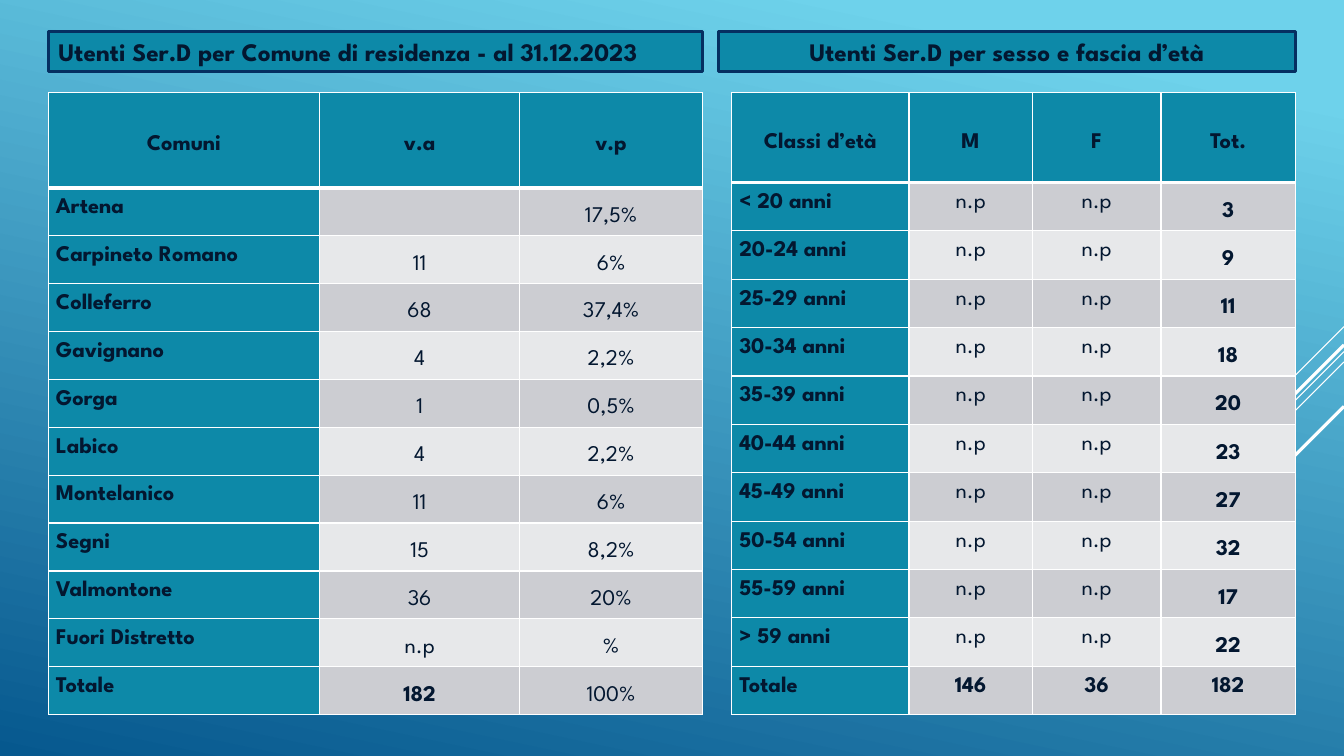
from dataclasses import dataclass

from lxml import etree
from pptx import Presentation
from pptx.dml.color import RGBColor
from pptx.enum.shapes import MSO_CONNECTOR, MSO_SHAPE
from pptx.enum.text import MSO_ANCHOR, MSO_AUTO_SIZE, PP_ALIGN
from pptx.oxml.ns import qn
from pptx.util import Cm, Pt

CENTER, LEFT, JUSTIFY = PP_ALIGN.CENTER, PP_ALIGN.LEFT, PP_ALIGN.JUSTIFY
TOP, MIDDLE = MSO_ANCHOR.TOP, MSO_ANCHOR.MIDDLE
NO_AUTOFIT = MSO_AUTO_SIZE.NONE
RECTANGLE, STRAIGHT = MSO_SHAPE.RECTANGLE, MSO_CONNECTOR.STRAIGHT

SLIDE_WIDTH, SLIDE_HEIGHT = 33.87, 19.05
RIGHT_EDGE = 32.64
HEADING_TOP, HEADING_HEIGHT = 0.79, 1.02
TABLE_TOP, TABLE_HEIGHT = 2.34, 15.67


@dataclass(frozen=True)
class Theme:
    font: str = "League Spartan"
    heading_size: int = 18
    table_size: int = 16
    text: str = "031730"
    accent: str = "0D89A8"
    outline: str = "052F61"
    band_dark: str = "CCCDD2"
    band_light: str = "E7E8EA"
    white: str = "FFFFFF"
    sky: str = "6ED2EB"
    sea: str = "06588E"


THEME = Theme()

RESIDENCE_ROWS = [
    ("Comuni", "v.a", "v.p"),
    ("Artena", "", "17,5%"),
    ("Carpineto Romano", "11", "6%"),
    ("Colleferro", "68", "37,4%"),
    ("Gavignano", "4", "2,2%"),
    ("Gorga", "1", "0,5%"),
    ("Labico", "4", "2,2%"),
    ("Montelanico", "11", "6%"),
    ("Segni", "15", "8,2%"),
    ("Valmontone", "36", "20%"),
    ("Fuori Distretto", "n.p", "%"),
    ("Totale", "182", "100%"),
]
AGE_TOTALS = [
    ("< 20 anni", "3"), ("20-24 anni", "9"), ("25-29 anni", "11"),
    ("30-34 anni", "18"), ("35-39 anni", "20"), ("40-44 anni", "23"),
    ("45-49 anni", "27"), ("50-54 anni", "32"), ("55-59 anni", "17"),
    ("> 59 anni", "22"),
]
AGE_ROWS = [
    ("Classi d’età", "M", "F", "Tot."),
    *((age, "n.p", "n.p", total) for age, total in AGE_TOTALS),
    ("Totale", "146", "36", "182"),
]
# Height at the right slide edge, length of each side, line width
DIAGONALS = [(8.23, 2.54, 0.75), (8.86, 8.28, 0.75), (9.12, 5.26, 0.75),
             (8.69, 4.85, 2.25), (10.24, 3.53, 2.25)]


def color(value):
    return RGBColor.from_string(value)


def format_paragraph(paragraph, size, bold, alignment):
    paragraph.alignment = alignment
    font = paragraph.font
    font.name, font.size, font.bold = THEME.font, Pt(size), bold
    font.color.rgb = color(THEME.text)


def paint_background(slide):
    fill = slide.background.fill
    fill.gradient()
    fill.gradient_angle = 258
    for stop, value, position in zip(fill.gradient_stops,
                                     (THEME.sky, THEME.sea), (0.1, 1)):
        stop.color.rgb = color(value)
        stop.position = position


def add_diagonals(slide, right):
    for top, length, width in DIAGONALS:
        line = slide.shapes.add_connector(
            STRAIGHT, Cm(right), Cm(top), Cm(right - length), Cm(top + length))
        line.line.color.rgb = color(THEME.white)
        line.line.width = Pt(width)
        properties = line._element.find(qn("p:spPr"))
        etree.SubElement(properties, qn("a:effectLst"))


def format_heading(shape, text, left, width, alignment):
    shape.left, shape.top = Cm(left), Cm(HEADING_TOP)
    shape.width, shape.height = Cm(width), Cm(HEADING_HEIGHT)
    shape.fill.solid()
    shape.fill.fore_color.rgb = color(THEME.accent)
    shape.line.color.rgb = color(THEME.outline)
    shape.line.width = Pt(2.25)
    frame = shape.text_frame
    frame.text = text
    frame.word_wrap = True
    frame.auto_size = NO_AUTOFIT
    frame.vertical_anchor = MIDDLE
    format_paragraph(frame.paragraphs[0], THEME.heading_size, True, alignment)


def set_borders(cell, top, bottom):
    """Draw white cell borders; top and bottom are widths in points."""
    properties = cell._tc.get_or_add_tcPr()
    widths = (("a:lnL", 1), ("a:lnR", 1), ("a:lnT", top), ("a:lnB", bottom))
    for index, (tag, width) in enumerate(widths):
        border = etree.Element(qn(tag), w=str(Pt(width)))
        fill = etree.SubElement(border, qn("a:solidFill"))
        etree.SubElement(fill, qn("a:srgbClr"), val=THEME.white)
        properties.insert(index, border)


def format_cell(cell, text, fill, bold, alignment, anchor):
    cell.text = text
    cell.fill.solid()
    cell.fill.fore_color.rgb = color(fill)
    cell.vertical_anchor = anchor
    cell.margin_left = cell.margin_right = Cm(0.19)
    cell.margin_top = cell.margin_bottom = 0
    paragraph = cell.text_frame.paragraphs[0]
    paragraph.line_spacing = 1.5
    paragraph.space_after = Pt(10)
    format_paragraph(paragraph, THEME.table_size, bold, alignment)


def add_data_table(slide, left, rows, column_widths, header_height,
                   is_bold, is_middle):
    """Add a table; is_bold and is_middle decide for body cells by row, column."""
    table = slide.shapes.add_table(
        len(rows), len(column_widths), Cm(left), Cm(TABLE_TOP),
        Cm(sum(column_widths)), Cm(TABLE_HEIGHT)).table
    table.first_row = table.horz_banding = False
    for column, width in zip(table.columns, column_widths):
        column.width = Cm(width)
    row_height = (TABLE_HEIGHT - header_height) / (len(rows) - 1)
    for row, values in enumerate(rows):
        header = row == 0
        table.rows[row].height = Cm(header_height if header else row_height)
        band = THEME.band_dark if row % 2 else THEME.band_light
        for column, text in enumerate(values):
            label = column == 0
            cell = table.cell(row, column)
            format_cell(
                cell, text,
                fill=THEME.accent if header or label else band,
                bold=header or label or is_bold(row, column),
                alignment=JUSTIFY if label and not header else CENTER,
                anchor=MIDDLE if header or is_middle(row, column) else TOP)
            set_borders(cell, top=3 if row == 1 else 1, bottom=3 if header else 1)


def add_residence_panel(slide, left, width):
    format_heading(slide.shapes.title,
                   "Utenti Ser.D per Comune di residenza - al 31.12.2023",
                   left, width, LEFT)
    last_row = len(RESIDENCE_ROWS) - 1
    add_data_table(slide, left, RESIDENCE_ROWS, (6.83, 5.05, 4.6), 2.39,
                   is_bold=lambda row, column: (row, column) == (last_row, 1),
                   is_middle=lambda row, column: column > 0)


def add_age_panel(slide, left, width):
    heading = slide.shapes.add_shape(RECTANGLE, 0, 0, 0, 0)
    heading.shadow.inherit = False
    format_heading(heading, "Utenti Ser.D per sesso e fascia d’età",
                   left, width, CENTER)
    column_widths = (4.47, 3.1, 3.25, 3.38)
    last_row = len(AGE_ROWS) - 1
    add_data_table(slide, left + width - sum(column_widths), AGE_ROWS,
                   column_widths, 2.26,
                   is_bold=lambda row, column: column == 3 or row == last_row,
                   is_middle=lambda row, column: column == 3 and row < last_row)


def main():
    presentation = Presentation()
    presentation.slide_width = Cm(SLIDE_WIDTH)
    presentation.slide_height = Cm(SLIDE_HEIGHT)
    title_only = presentation.slide_layouts[5]
    slide = presentation.slides.add_slide(title_only)
    paint_background(slide)
    add_diagonals(slide, SLIDE_WIDTH)
    add_residence_panel(slide, 1.22, 16.48)
    add_age_panel(slide, 18.11, RIGHT_EDGE - 18.11)
    presentation.save("out.pptx")


if __name__ == "__main__":
    main()
